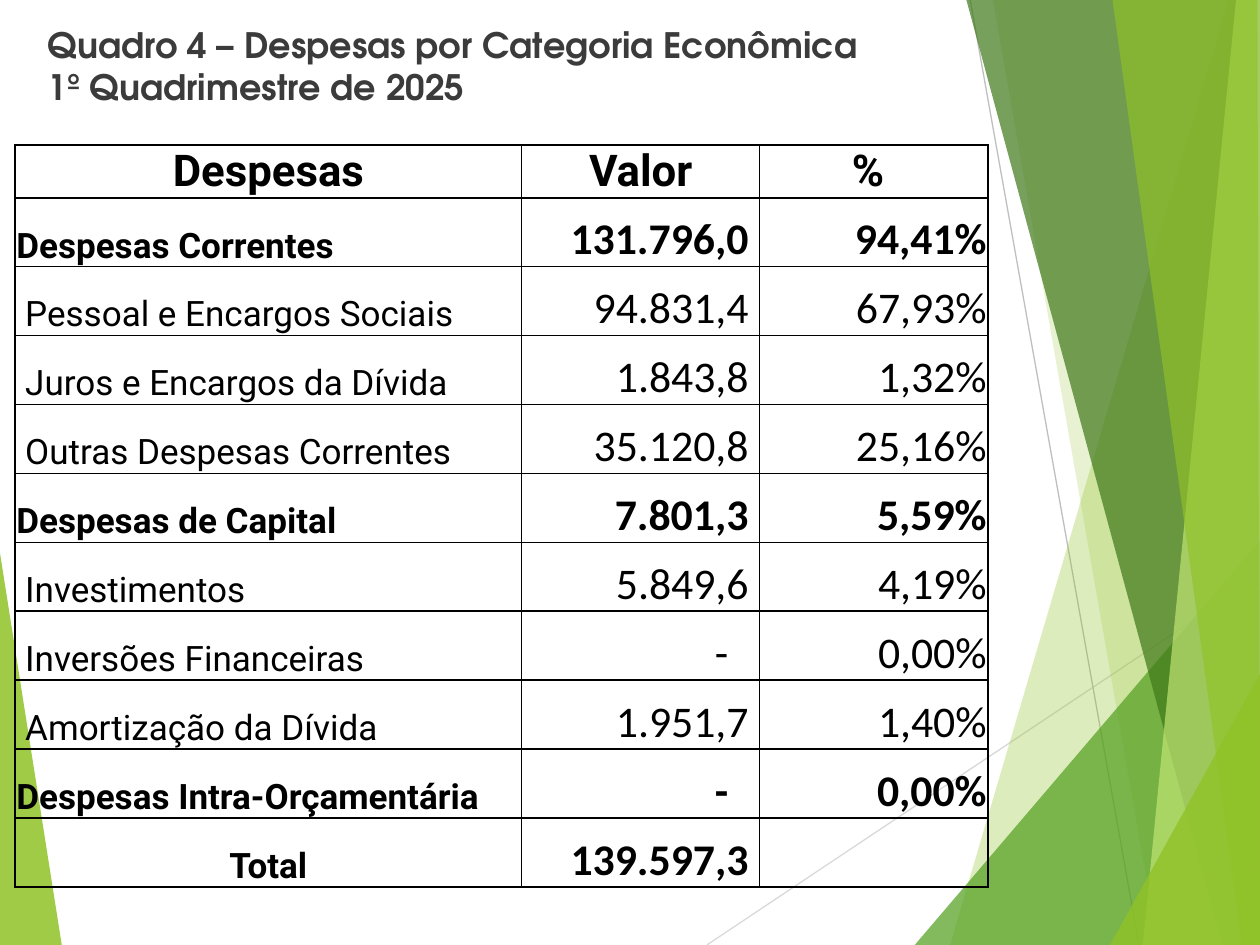
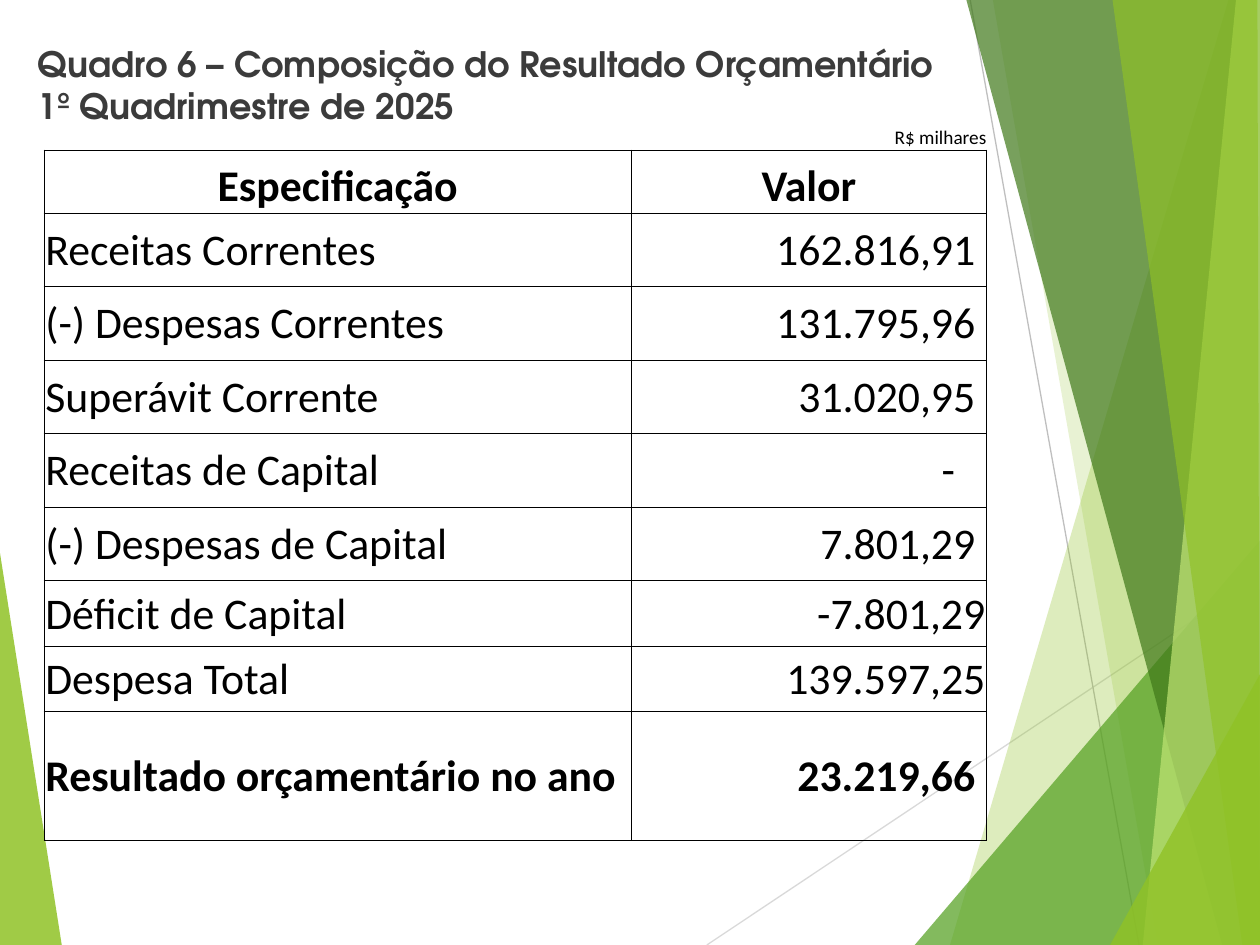
from dataclasses import dataclass
from typing import NamedTuple

from lxml.etree import SubElement
from pptx import Presentation
from pptx.dml.color import RGBColor
from pptx.enum.shapes import MSO_CONNECTOR
from pptx.enum.text import MSO_ANCHOR, MSO_AUTO_SIZE, PP_ALIGN
from pptx.oxml.ns import qn
from pptx.util import Inches, Pt


@dataclass(frozen=True)
class Theme:
    title_font: str = "TeX Gyre Adventor"
    label_font: str = "Roboto"
    number_font: str = "Calibri"
    title_size: int = 20
    label_size: int = 20
    number_size: int = 25
    unit_size: int = 11
    title_color: str = "3B3B3B"
    ink: str = "000000"
    lime: str = "90C226"
    pale_lime: str = "C0E474"
    green: str = "54A021"
    dark_green: str = "3F7819"
    light_line: str = "D9D9D9"
    mid_line: str = "BFBFBF"


THEME = Theme()
INSET = 0.01
NUMBER_GAP = 0.09  # keeps figures clear of the cell's right edge
DASH_GAP = 0.25
SUBITEM_INDENT = 0.08
ALL_SIDES = "LRTB"


class Facet(NamedTuple):
    points: list[tuple[float, float]]
    color: str
    opacity: int


class Ray(NamedTuple):
    start: tuple[float, float]
    end: tuple[float, float]
    color: str


@dataclass(frozen=True)
class CellText:
    text: str = ""
    size: int = THEME.number_size
    font: str = THEME.number_font
    bold: bool = False
    align: PP_ALIGN = PP_ALIGN.LEFT
    anchor: MSO_ANCHOR = MSO_ANCHOR.MIDDLE
    left: float = INSET
    right: float = INSET
    sides: str = ALL_SIDES


class Expense(NamedTuple):
    label: str
    value: str
    share: str
    bold: bool = False


BACKDROP = [
    Facet([(0, 4.39), (0.49, 7.5), (0, 7.5)], THEME.lime, 85),
    Ray((5.61, 7.5), (10, 4.57), THEME.light_line),
    Ray((7.7, 0), (9.04, 7.5), THEME.mid_line),
    Facet([(9.75, 0), (7.54, 7.5), (10, 7.5), (10, 0)], THEME.lime, 30),
    Facet([(7.88, 0), (9.19, 7.5), (10, 7.5), (10, 0)], THEME.lime, 20),
    Facet([(7.26, 7.5), (10, 4.29), (10, 7.5)], THEME.green, 72),
    Facet([(7.67, 0), (9.7, 7.5), (10, 7.5), (10, 0)], THEME.dark_green, 70),
    Facet([(9.81, 0), (9.07, 7.5), (10, 7.5), (10, 0)], THEME.pale_lime, 70),
    Facet([(8.83, 0), (9.86, 7.5), (10, 7.5), (9.98, 0)], THEME.lime, 65),
    Facet([(8.81, 7.5), (10, 5.35), (10, 7.5)], THEME.lime, 80),
]

EXPENSES = [
    Expense("Despesas Correntes", "131.796,0", "94,41%", True),
    Expense("Pessoal e Encargos Sociais", "94.831,4", "67,93%"),
    Expense("Juros e Encargos da Dívida", "1.843,8", "1,32%"),
    Expense("Outras Despesas Correntes", "35.120,8", "25,16%"),
    Expense("Despesas de Capital", "7.801,3", "5,59%", True),
    Expense("Investimentos", "5.849,6", "4,19%"),
    Expense("Inversões Financeiras", "-", "0,00%"),
    Expense("Amortização da Dívida", "1.951,7", "1,40%"),
    Expense("Despesas Intra-Orçamentária", "-", "0,00%", True),
    Expense("Total", "139.597,3", "", True),
]

RESULTS = [
    ("Receitas Correntes", "162.816,91"),
    ("(-) Despesas Correntes", "131.795,96"),
    ("Superávit Corrente", "31.020,95"),
    ("Receitas de Capital", "-"),
    ("(-) Despesas de Capital", "7.801,29"),
    ("Déficit de Capital", "-7.801,29"),
    ("Despesa Total", "139.597,25"),
    ("Resultado orçamentário no ano", "23.219,66"),
]
FLUSH_RESULTS = ("Déficit de Capital", "Despesa Total")


def add_facet(page, facet: Facet):
    points = [(Inches(x), Inches(y)) for x, y in facet.points]
    builder = page.shapes.build_freeform(*points[0])
    builder.add_line_segments(points[1:], close=True)
    shape = builder.convert_to_shape()
    shape.shadow.inherit = False
    shape.line.fill.background()
    shape.fill.solid()
    shape.fill.fore_color.rgb = RGBColor.from_string(facet.color)
    color = shape.element.spPr.find(".//" + qn("a:srgbClr"))
    SubElement(color, qn("a:alpha"), val=str(facet.opacity * 1000))
    return shape


def add_ray(page, ray: Ray):
    ends = [Inches(value) for value in ray.start + ray.end]
    line = page.shapes.add_connector(MSO_CONNECTOR.STRAIGHT, *ends)
    line.line.color.rgb = RGBColor.from_string(ray.color)
    line.line.width = Pt(0.75)
    SubElement(line.element.spPr, qn("a:effectLst"))
    return line


def move_backdrop_to_layout(page) -> None:
    """Draw the backdrop on a page, then hand it to the layout all pages share."""
    tree = page.slide_layout.shapes.element
    for number, item in enumerate(BACKDROP, start=100):
        draw = add_facet if isinstance(item, Facet) else add_ray
        element = draw(page, item).element
        element.xpath(".//p:cNvPr")[0].set("id", str(number))
        tree.append(element)


def set_title(page, text: str, left: float, top: float, height: float) -> None:
    title = page.shapes.title
    title.left, title.top = Inches(left), Inches(top)
    title.width, title.height = Inches(8.5), Inches(height)
    frame = title.text_frame
    frame.text = text
    frame.word_wrap = True
    frame.auto_size = MSO_AUTO_SIZE.NONE
    frame.vertical_anchor = MSO_ANCHOR.TOP
    para = frame.paragraphs[0]
    para.alignment = PP_ALIGN.LEFT
    for span in para.runs:
        set_font(span.font, THEME.title_font, THEME.title_size, True, THEME.title_color)


def set_font(font, name: str, size: int, bold: bool, color: str) -> None:
    font.name, font.size, font.bold = name, Pt(size), bold
    font.color.rgb = RGBColor.from_string(color)


def set_borders(cell, width: float, sides: str) -> None:
    properties = cell._tc.get_or_add_tcPr()
    for side in ALL_SIDES:
        line = SubElement(properties, qn(f"a:ln{side}"), w=str(Pt(width)))
        if side in sides:
            fill = SubElement(line, qn("a:solidFill"))
            SubElement(fill, qn("a:srgbClr"), val=THEME.ink)
        else:
            SubElement(line, qn("a:noFill"))


def fill_cell(cell, content: CellText, border: float) -> None:
    set_borders(cell, border, content.sides)
    cell.fill.background()
    cell.vertical_anchor = content.anchor
    cell.margin_left, cell.margin_right = Inches(content.left), Inches(content.right)
    cell.margin_top, cell.margin_bottom = Inches(INSET), 0
    para = cell.text_frame.paragraphs[0]
    para.text = content.text
    para.alignment = content.align
    set_font(para.font, content.font, content.size, content.bold, THEME.ink)
    for span in para.runs:
        set_font(span.font, content.font, content.size, content.bold, THEME.ink)


def add_grid(page, left: float, top: float, columns: list[float],
             heights: list[float], rows: list[list[CellText]], border: float):
    frame = page.shapes.add_table(
        len(heights), len(columns), Inches(left), Inches(top),
        Inches(sum(columns)), Inches(sum(heights)))
    table = frame.table
    table.first_row = table.horz_banding = False
    for column, width in zip(table.columns, columns):
        column.width = Inches(width)
    for row, height, contents in zip(table.rows, heights, rows):
        row.height = Inches(height)
        for cell, content in zip(row.cells, contents):
            fill_cell(cell, content, border)
    return table


def number_cell(text: str, bold: bool, anchor: MSO_ANCHOR, flush: bool = False) -> CellText:
    gap = INSET if flush else DASH_GAP if text == "-" else NUMBER_GAP
    return CellText(text, bold=bold, align=PP_ALIGN.RIGHT, anchor=anchor, right=gap)


def expense_row(item: Expense) -> list[CellText]:
    bottom = MSO_ANCHOR.BOTTOM
    label = CellText(
        item.label, THEME.label_size, THEME.label_font, item.bold,
        PP_ALIGN.CENTER if item.label == "Total" else PP_ALIGN.LEFT, bottom,
        left=INSET if item.bold else SUBITEM_INDENT)
    return [label, number_cell(item.value, item.bold, bottom),
            number_cell(item.share, item.bold, bottom, flush=True)]


def build_expenses(page) -> None:
    set_title(page, "Quadro 4 – Despesas por Categoria Econômica\v1º Quadrimestre de 2025",
              0.28, 0.14, 0.79)
    header = [CellText(text, font=THEME.label_font, bold=True, align=PP_ALIGN.CENTER, right=gap)
              for text, gap in (("Despesas", INSET), ("Valor", INSET), ("%", 0.1))]
    heights = [0.42] + [5.47 / len(EXPENSES)] * len(EXPENSES)
    add_grid(page, 0.12, 1.15, [4.02, 1.89, 1.81], heights,
             [header] + [expense_row(item) for item in EXPENSES], border=1)


def build_results(page) -> None:
    set_title(page, "Quadro 6 – Composição do Resultado Orçamentário\v1º Quadrimestre de 2025",
              0.2, 0.29, 0.33)
    blank = CellText(size=THEME.unit_size, sides="B")
    unit = CellText("R$ milhares", THEME.unit_size, align=PP_ALIGN.RIGHT,
                    anchor=MSO_ANCHOR.BOTTOM, left=0, right=0, sides="B")
    header = [CellText(text, bold=True, align=PP_ALIGN.CENTER, anchor=MSO_ANCHOR.BOTTOM)
              for text in ("Especificação", "Valor")]
    rows = [[blank, blank, unit], header + [CellText()]]
    for label, value in RESULTS:
        bold = label == RESULTS[-1][0]
        number = number_cell(value, bold, MSO_ANCHOR.MIDDLE, label in FLUSH_RESULTS)
        rows.append([CellText(label, bold=bold), number, CellText()])
    heights = [0.35, 0.5] + [2.92 / 5] * 5 + [0.52] * 2 + [1.02]
    table = add_grid(page, 0.35, 0.84, [4.66, 1.25, 1.57], heights, rows, border=0.5)
    for row in range(1, len(rows)):
        table.cell(row, 1).merge(table.cell(row, 2))


def main() -> None:
    deck = Presentation()
    deck.slide_width, deck.slide_height = Inches(10), Inches(7.5)
    layout = deck.slide_layouts[5]
    expenses, results = (deck.slides.add_slide(layout) for _ in range(2))
    move_backdrop_to_layout(expenses)
    build_expenses(expenses)
    build_results(results)
    deck.save("out.pptx")


if __name__ == "__main__":
    main()
